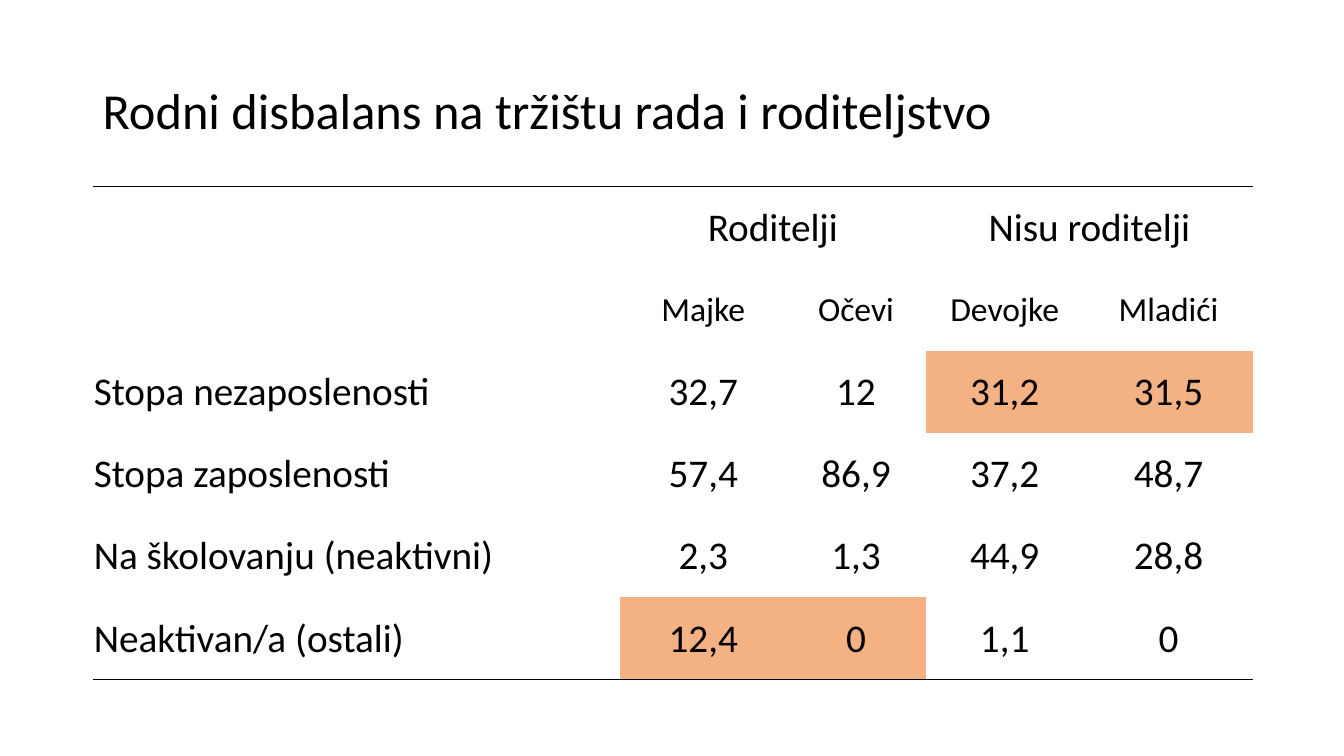
"""Build a slide with a table on gender imbalance in the labour market and parenthood."""
import pptx
import pptx.dml.color
import pptx.enum.text
import pptx.oxml
import pptx.oxml.ns
import pptx.util

Inches = pptx.util.Inches
Pt = pptx.util.Pt
ALIGN = pptx.enum.text.PP_ALIGN
MIDDLE = pptx.enum.text.MSO_ANCHOR.MIDDLE
BLACK = pptx.dml.color.RGBColor(0x00, 0x00, 0x00)
ORANGE = pptx.dml.color.RGBColor(0xF4, 0xB1, 0x83)
NO_GRID_STYLE = "{2D5ABB26-0587-4C30-8999-92F81FD0307C}"

LEFT, WIDTH = 0.92, 11.5
TITLE_TOP, TITLE_HEIGHT = 0.4, 1.45
TABLE_TOP, TABLE_HEIGHT = 1.85, 4.89
COLUMN_WIDTHS = [5.23, 1.65, 1.38, 1.57, 1.68]
TITLE = "Rodni disbalans na tržištu rada i roditeljstvo"
ROWS = [
    ["", "Roditelji", "", "Nisu roditelji", ""],
    ["", "Majke", "Očevi", "Devojke", "Mladići"],
    ["Stopa nezaposlenosti", "32,7", "12", "31,2", "31,5"],
    ["Stopa zaposlenosti", "57,4", "86,9", "37,2", "48,7"],
    ["Na školovanju (neaktivni)", "2,3", "1,3", "44,9", "28,8"],
    ["Neaktivan/a (ostali)", "12,4", "0", "1,1", "0"],
]
SUBHEADER_ROW = 1
GROUP_COLUMNS = [1, 3]
HIGHLIGHTS = {(2, 3), (2, 4), (5, 1), (5, 2)}
CELL_FORMAT = {
    "margin_left": Inches(0.01),
    "margin_right": Inches(0.01),
    "margin_top": Inches(0.01),
    "margin_bottom": 0,
    "vertical_anchor": MIDDLE,
}


def write_text(paragraph, text, size, alignment):
    """Write one run of black Calibri text into a paragraph."""
    paragraph.alignment = alignment
    run = paragraph.add_run()
    run.text = text
    for name, value in {"name": "Calibri", "size": Pt(size)}.items():
        setattr(run.font, name, value)
    run.font.color.rgb = BLACK


def add_title(slide):
    """Add the slide title in a vertically centred text box."""
    box = slide.shapes.add_textbox(
        Inches(LEFT), Inches(TITLE_TOP), Inches(WIDTH), Inches(TITLE_HEIGHT))
    for name, value in {"word_wrap": True, "vertical_anchor": MIDDLE}.items():
        setattr(box.text_frame, name, value)
    paragraph = box.text_frame.paragraphs[0]
    paragraph.line_spacing = 0.9
    write_text(paragraph, TITLE, 36, ALIGN.LEFT)


def add_border(cell, side):
    """Draw a thin black line on the side of a cell named by its tag."""
    line = pptx.oxml.parse_xml(
        f'<a:{side} {pptx.oxml.ns.nsdecls("a")} w="{Pt(1)}"><a:solidFill>'
        f'<a:srgbClr val="{BLACK}"/></a:solidFill></a:{side}>')
    cell._tc.get_or_add_tcPr().insert(0, line)


def format_cell(cell, row, column):
    """Fill in the text, margins, colour and borders of one cell."""
    for name, value in CELL_FORMAT.items():
        setattr(cell, name, value)
    if (row, column) in HIGHLIGHTS:
        cell.fill.solid()
        cell.fill.fore_color.rgb = ORANGE
    else:
        cell.fill.background()
    if row == 0:
        add_border(cell, "lnT")
    if row == len(ROWS) - 1:
        add_border(cell, "lnB")
    text = ROWS[row][column]
    if text:
        size = 24 if row == SUBHEADER_ROW else 28
        alignment = ALIGN.CENTER if column else ALIGN.LEFT
        write_text(cell.text_frame.paragraphs[0], text, size, alignment)


def add_rates_table(slide):
    """Add the table of rates for parents and for those without children."""
    frame = slide.shapes.add_table(
        len(ROWS), len(COLUMN_WIDTHS), Inches(LEFT), Inches(TABLE_TOP),
        Inches(WIDTH), Inches(TABLE_HEIGHT))
    table = frame.table
    for name in ("first_row", "horz_banding"):
        setattr(table, name, False)
    table._tbl.tblPr.find(pptx.oxml.ns.qn("a:tableStyleId")).text = NO_GRID_STYLE
    for column, width in zip(table.columns, COLUMN_WIDTHS):
        column.width = Inches(width)
    for row in table.rows:
        row.height = Inches(TABLE_HEIGHT / len(ROWS))
    for column in GROUP_COLUMNS:
        table.cell(0, column).merge(table.cell(0, column + 1))
    for row in range(len(ROWS)):
        for column in range(len(COLUMN_WIDTHS)):
            format_cell(table.cell(row, column), row, column)


def main():
    """Create the presentation and save it."""
    presentation = pptx.Presentation()
    presentation.slide_width = Inches(13.33)
    presentation.slide_height = Inches(7.5)
    slide = presentation.slides.add_slide(presentation.slide_layouts[6])
    add_title(slide)
    add_rates_table(slide)
    presentation.save("out.pptx")


if __name__ == "__main__":
    main()
